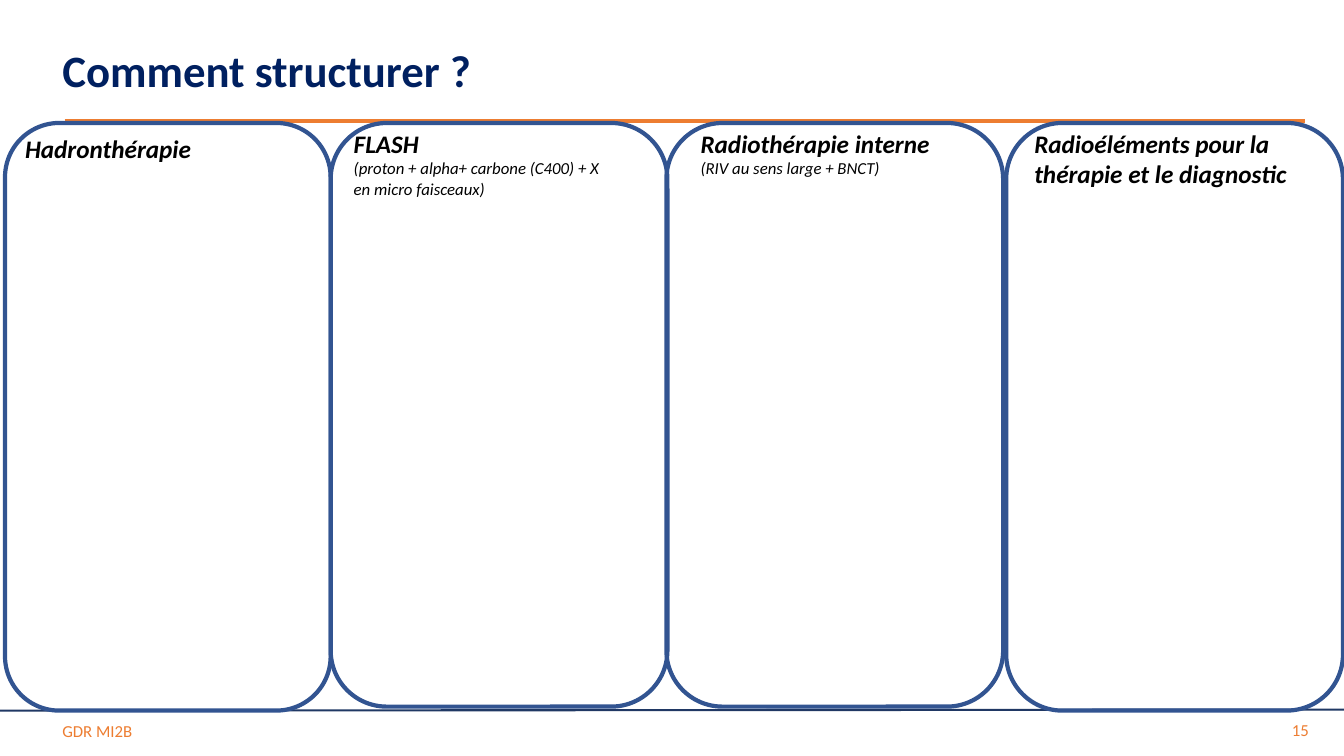
from lxml import etree
from pptx import Presentation
from pptx import util as u
from pptx.dml.color import RGBColor
from pptx.enum import shapes, text
from pptx.oxml.ns import qn

PX = 9144  # EMU in one px, 100 px to the inch
WIDTH, HEIGHT = 1333, 750
FONT = "Calibri"
COLORS = {"title": "002060", "accent": "ED7D31", "footer_rule": "203864",
          "frame": "325491", "text": "000000"}

FRAME_TOP = 122
# Frame left, width, height; label offset from the frame, label size; heading, detail
THEMES = [
    ((5, 323, 583), (10, 5, 317, 135), "Hadronthérapie", None),
    ((328, 334, 579), (13, 0, 272, 131), "FLASH",
     "(proton + alpha+ carbone (C400) + X en micro faisceaux)"),
    ((661, 334, 579), (24, 0, 313, 91), "Radiothérapie interne",
     "(RIV au sens large + BNCT)"),
    ((998, 334, 583), (18, 0, 317, 91),
     "Radioéléments pour la thérapie et le diagnostic", None),
]


def px(*lengths):
    return [u.Emu(length * PX) for length in lengths]


def color(name):
    return RGBColor.from_string(COLORS[name])


def add_text(page, box, lines, ink="text", bold=False, italic=False, wrap=True,
             align=text.PP_ALIGN.LEFT, anchor=text.MSO_ANCHOR.TOP):
    """Place lines of (words, size, bold) in a text box."""
    frame = page.shapes.add_textbox(*px(*box)).text_frame
    frame.word_wrap = wrap
    frame.vertical_anchor = anchor
    for index, (words, size, heavy) in enumerate(lines):
        para = frame.paragraphs[0] if index == 0 else frame.add_paragraph()
        para.alignment = align
        span = para.add_run()
        span.text = words
        span.font.name = FONT
        span.font.size = u.Pt(size)
        span.font.bold = heavy or bold
        span.font.italic = italic
        span.font.color.rgb = color(ink)


def add_rule(page, start, end, ink, weight):
    rule = page.shapes.add_connector(shapes.MSO_CONNECTOR.STRAIGHT, *px(*start, *end))
    rule.line.color.rgb = color(ink)
    rule.line.width = u.Pt(weight)
    etree.SubElement(rule._element.spPr, qn("a:effectLst"))


def add_header(page, left, top, width, height):
    add_rule(page, (left + 12, top + 83), (left + width, top + 83), "accent", 3)
    add_text(page, (left, top, 440, height), [("Comment structurer ?", 32, True)],
             ink="title", wrap=False)


def add_footer(page, left, top, width, height):
    add_rule(page, (left, top + 1), (left + width, top), "footer_rule", 1.5)
    middle = text.MSO_ANCHOR.MIDDLE
    add_text(page, (left + 52, top + 1, 1194, height), [("GDR MI2B", 12, False)],
             ink="accent", anchor=middle)
    add_text(page, (left + 1255, top, 53, height), [("15", 12, False)],
             ink="accent", anchor=middle, align=text.PP_ALIGN.RIGHT)


def add_theme(page, left, top, width, height, label, heading, detail):
    frame = page.shapes.add_shape(shapes.MSO_SHAPE.ROUNDED_RECTANGLE,
                                  *px(left, top, width, height))
    frame.shadow.inherit = False
    frame.fill.background()
    frame.line.color.rgb = color("frame")
    frame.line.width = u.Pt(3)
    right, down, label_width, label_height = label
    lines = [(heading, 18, True)]
    if detail:
        lines.append((detail, 12, False))
    add_text(page, (left + right, top + down, label_width, label_height), lines,
             italic=True)


def main():
    deck = Presentation()
    deck.slide_width, deck.slide_height = px(WIDTH, HEIGHT)
    page = deck.slides.add_slide(deck.slide_layouts[6])

    # Title and footer
    add_header(page, 52, 37, 1242, 64)
    add_footer(page, 0, 704, WIDTH, 40)

    # Four research themes
    for (left, width, height), label, heading, detail in THEMES:
        add_theme(page, left, FRAME_TOP, width, height, label, heading, detail)

    deck.save("out.pptx")


if __name__ == "__main__":
    main()
